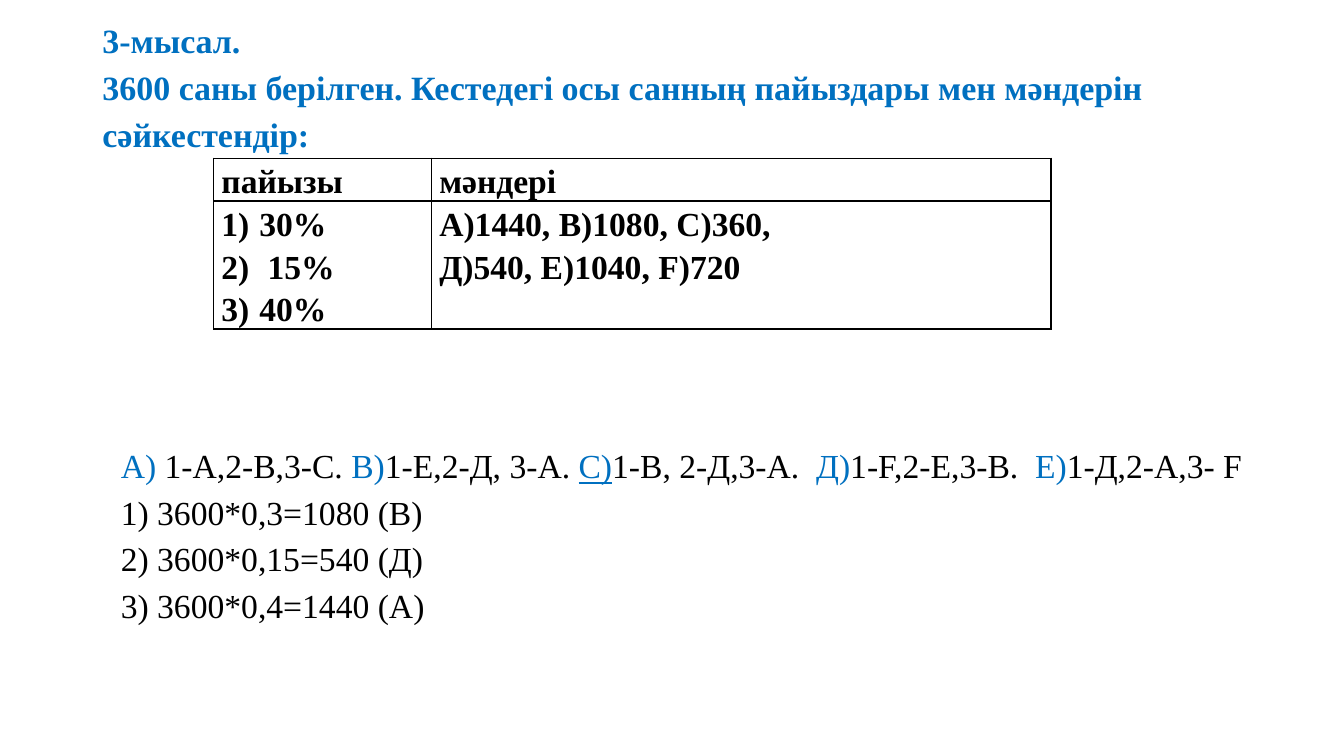
"""Build the slide that matches percentages of 3600 with their values."""
from lxml.etree import SubElement
from pptx import Presentation
from pptx.dml.color import RGBColor
from pptx.enum.text import MSO_ANCHOR, MSO_AUTO_SIZE, PP_ALIGN
from pptx.oxml.ns import qn
from pptx.util import Pt

COLORS = {"accent": "0070C0", "text": "000000"}


def write(para, text, size=24, color="text", bold=False, underline=None, align=PP_ALIGN.JUSTIFY):
    para.alignment = align
    para.line_spacing = 1.15
    para.space_before = para.space_after = Pt(0)
    span = para.add_run()
    span.text = text
    span.font.name = "Times New Roman"
    span.font.size = Pt(size)
    span.font.bold = bold
    span.font.underline = underline
    span.font.color.rgb = RGBColor.from_string(COLORS[color])


def set_border(cell, side):
    line = SubElement(cell._tc.get_or_add_tcPr(), qn(f"a:{side}"), w=str(Pt(1)))
    fill = SubElement(line, qn("a:solidFill"))
    SubElement(fill, qn("a:srgbClr"), val=COLORS["text"])


deck = Presentation()
deck.slide_width, deck.slide_height = Pt(960), Pt(540)
page = deck.slides.add_slide(deck.slide_layouts[5])

title = page.shapes.title
title.left, title.top, title.width, title.height = Pt(66), Pt(9.4), Pt(828), Pt(134.6)
frame = title.text_frame
frame.word_wrap = True
frame.auto_size = MSO_AUTO_SIZE.NONE
frame.vertical_anchor = MSO_ANCHOR.TOP
frame.margin_top = frame.margin_bottom = Pt(0)
heading = frame.paragraphs[0]
title_format = {"size": 24.3, "color": "accent", "bold": True, "align": PP_ALIGN.LEFT}
write(heading, "3-мысал.", **title_format)
heading.add_line_break()
write(
    heading,
    "3600 саны берілген. Кестедегі осы санның пайыздары мен мәндерін сәйкестендір:",
    **title_format,
)

rows = [
    [["пайызы"], ["мәндері"]],
    [["30%", " 15%", "40%"], ["А)1440, В)1080, С)360,", "Д)540, Е)1040, F)720"]],
]
column_widths = [155.6, 442.4]
row_heights = [30.5, 91.5]
table = page.shapes.add_table(
    2, 2, Pt(152.8), Pt(113), Pt(sum(column_widths)), Pt(sum(row_heights))
).table
table.first_row = table.horz_banding = False
for column, width in zip(table.columns, column_widths):
    column.width = Pt(width)
for row, height, contents in zip(table.rows, row_heights, rows):
    row.height = Pt(height)
    for cell, lines in zip(row.cells, contents):
        cell.margin_left = cell.margin_right = Pt(5.4)
        cell.margin_top = cell.margin_bottom = Pt(0)
        for side in ("lnL", "lnR", "lnT", "lnB"):
            set_border(cell, side)
        cell.fill.background()
        for index, line in enumerate(lines):
            para = cell.text_frame.paragraphs[0] if index == 0 else cell.text_frame.add_paragraph()
            write(para, line, bold=True)
            if line.endswith("%"):
                properties = para._p.get_or_add_pPr()
                properties.set("marL", str(Pt(27)))
                properties.set("indent", str(Pt(-27)))
                SubElement(properties, qn("a:buAutoNum"), type="arabicParenR")

box = page.shapes.add_textbox(Pt(79.2), Pt(310.3), Pt(858.2), Pt(141))
frame = box.text_frame
frame.word_wrap = True
frame.auto_size = MSO_AUTO_SIZE.SHAPE_TO_FIT_TEXT
options = [
    ("А) ", "1-А,2-В,3-С. "),
    ("В)", "1-Е,2-Д, 3-А. "),
    ("С)", "1-В, 2-Д,3-А.  "),
    ("Д)", "1-F,2-Е,3-В.  "),
    ("Е)", "1-Д,2-А,3- F"),
]
for letter, matches in options:
    write(frame.paragraphs[0], letter, color="accent", underline=True if letter == "С)" else None)
    write(frame.paragraphs[0], matches)
for solution in ("1) 3600*0,3=1080 (В)", "2) 3600*0,15=540 (Д)", "3) 3600*0,4=1440 (А)"):
    write(frame.add_paragraph(), solution)

deck.save("out.pptx")
